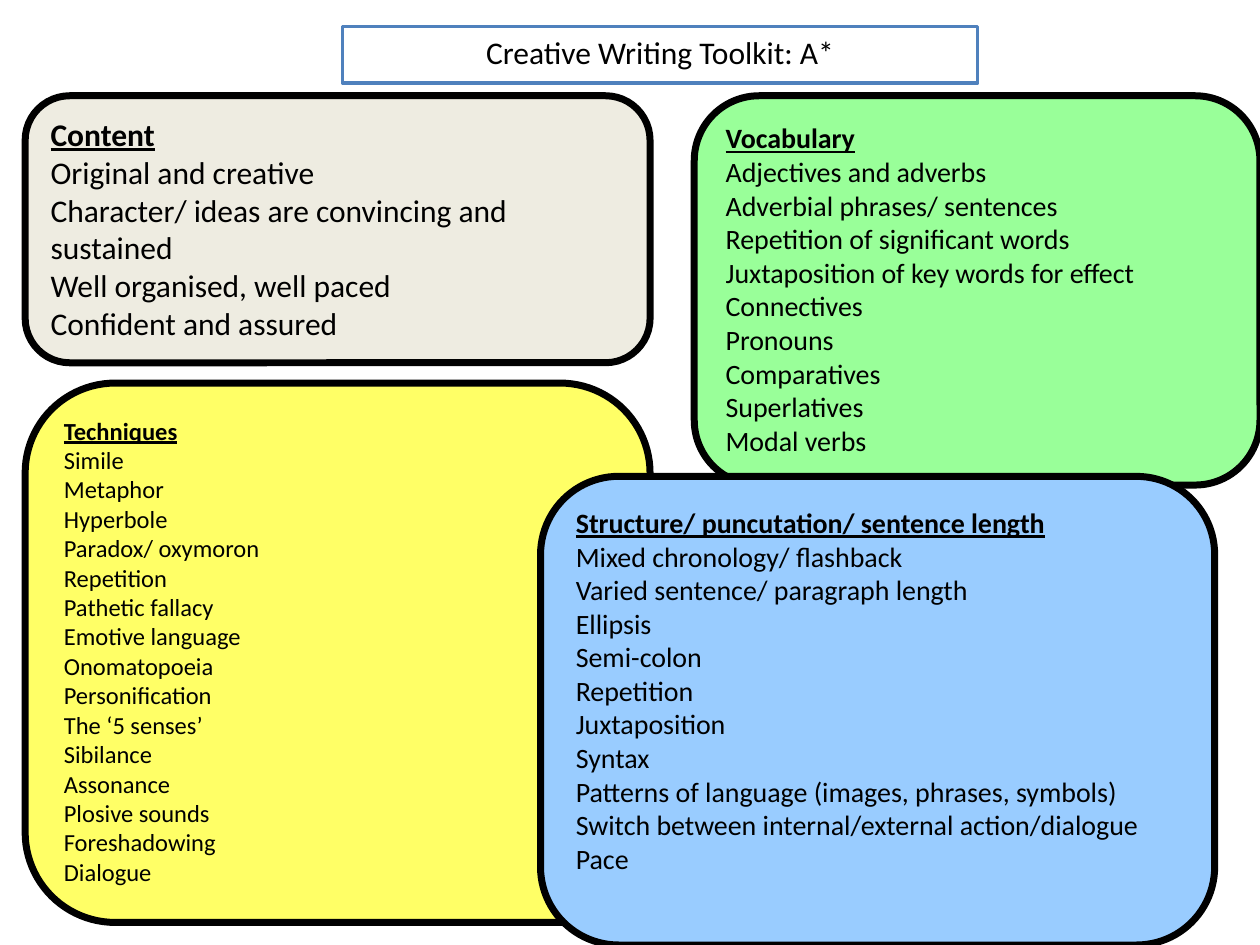
from lxml import etree
from pptx import Presentation
from pptx import util as u
from pptx.dml.color import RGBColor
from pptx.enum import shapes, text
from pptx.oxml import ns

COLOURS = {
    "ink": "000000",
    "paper": "FFFFFF",
    "title line": "4F81BD",
    "content": "EEECE1",
    "vocabulary": "99FF99",
    "techniques": "FFFF66",
    "structure": "99CCFF",
}

PANELS = [
    ("content", (14.4, 54.7, 357.1, 152.6), 18, "Content", [
        "Original and creative",
        "Character/ ideas are convincing and sustained",
        "Well organised, well paced",
        "Confident and assured",
    ]),
    ("vocabulary", (396.7, 54.7, 323.3, 222.5), 16, "Vocabulary", [
        "Adjectives and adverbs",
        "Adverbial phrases/ sentences",
        "Repetition of significant words",
        "Juxtaposition of key words for effect",
        "Connectives",
        "Pronouns",
        "Comparatives",
        "Superlatives",
        "Modal verbs",
    ]),
    ("techniques", (14.4, 218.9, 357.1, 308.2), 14, "Techniques", [
        "Simile",
        "Metaphor",
        "Hyperbole",
        "Paradox/ oxymoron",
        "Repetition",
        "Pathetic fallacy",
        "Emotive language",
        "Onomatopoeia",
        "Personification",
        "The ‘5 senses’",
        "Sibilance",
        "Assonance",
        "Plosive sounds",
        "Foreshadowing",
        "Dialogue",
    ]),
    ("structure", (308.9, 272.2, 385.2, 267.8), 16,
     "Structure/ puncutation/ sentence length", [
        "Mixed chronology/ flashback",
        "Varied sentence/ paragraph length",
        "Ellipsis",
        "Semi-colon",
        "Repetition",
        "Juxtaposition",
        "Syntax",
        "Patterns of language (images, phrases, symbols)",
        "Switch between internal/external action/dialogue",
        "Pace",
    ]),
]


def colour(name):
    """Return the named colour."""
    return RGBColor.from_string(COLOURS[name])


def style_box(box, fill, line, width):
    """Fill and outline a box and set how its text is laid out."""
    box.fill.solid()
    box.fill.fore_color.rgb = colour(fill)
    box.line.color.rgb = colour(line)
    box.line.width = u.Pt(width)
    frame = box.text_frame
    frame.word_wrap = True
    frame.auto_size = text.MSO_AUTO_SIZE.NONE
    frame.vertical_anchor = text.MSO_ANCHOR.TOP


def style_paragraph(para, size, align, heading=False):
    """Set the font and alignment of a paragraph."""
    para.alignment = align
    para.font.name = "Calibri"
    para.font.size = u.Pt(size)
    para.font.color.rgb = colour("ink")
    para.font.bold = heading
    para.font.underline = heading


def add_title(page, bounds, wording):
    """Turn the title placeholder into a rounded banner."""
    box = page.shapes.title
    box.left, box.top, box.width, box.height = map(u.Pt, bounds)
    outline = etree.SubElement(box.element.spPr, ns.qn("a:prstGeom"), prst="roundRect")
    etree.SubElement(outline, ns.qn("a:avLst"))
    style_box(box, "paper", "title line", 2)
    box.text_frame.text = wording
    style_paragraph(box.text_frame.paragraphs[0], 18, text.PP_ALIGN.CENTER)


def add_panel(page, bounds, fill, size, heading, items):
    """Add a rounded panel with an underlined heading over its items."""
    box = page.shapes.add_shape(
        shapes.MSO_SHAPE.ROUNDED_RECTANGLE, *map(u.Pt, bounds))
    box.shadow.inherit = False
    style_box(box, fill, "ink", 4)
    box.text_frame.text = "\n".join([heading, *items])
    for index, para in enumerate(box.text_frame.paragraphs):
        style_paragraph(para, size, text.PP_ALIGN.LEFT, heading=index == 0)


def main():
    """Build and save the toolkit slide."""
    deck = Presentation()
    deck.slide_width, deck.slide_height = u.Pt(720), u.Pt(540)
    page = deck.slides.add_slide(deck.slide_layouts.get_by_name("Title Only"))
    add_title(page, (195.8, 15.1, 362.9, 32.4), "Creative Writing Toolkit: A*")
    for fill, bounds, size, heading, items in PANELS:
        add_panel(page, bounds, fill, size, heading, items)
    deck.save("out.pptx")


if __name__ == "__main__":
    main()
